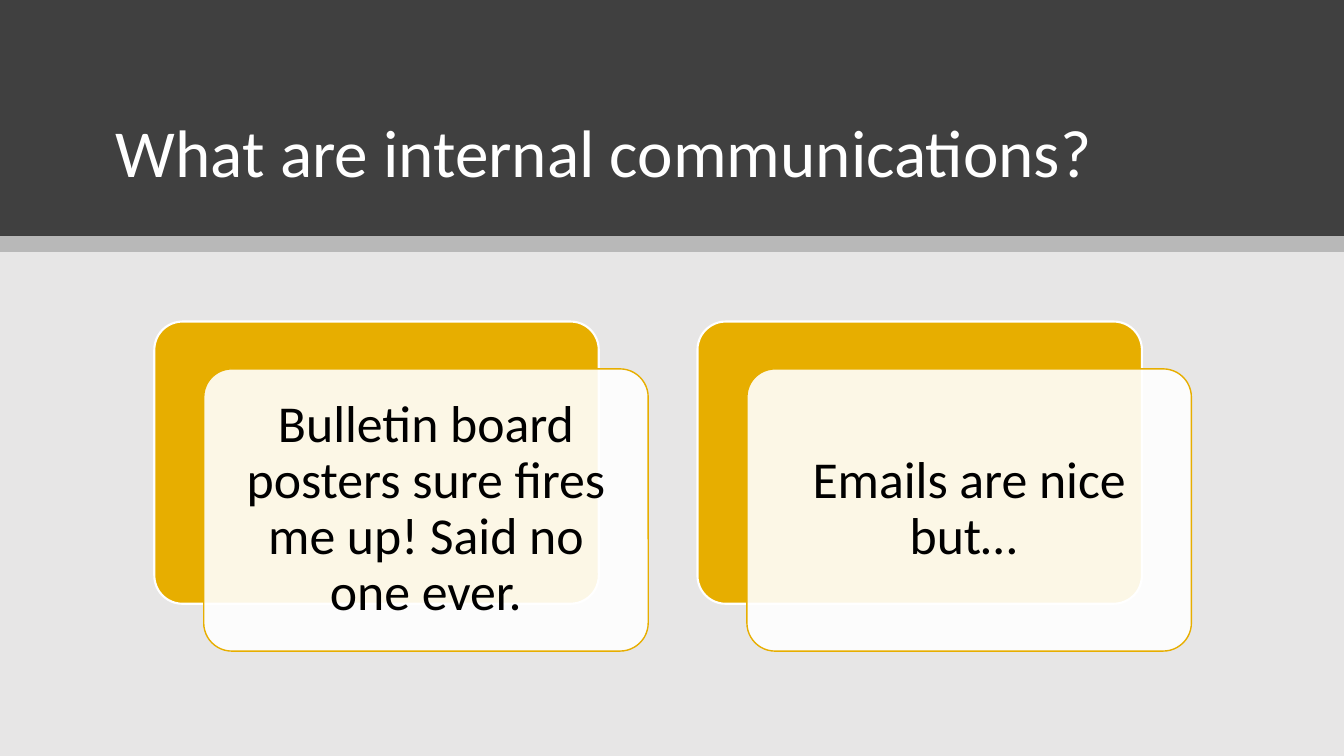
from dataclasses import dataclass
from typing import Any, Optional

from lxml import etree
from pptx import Presentation
from pptx.dml.color import RGBColor
from pptx.enum import shapes, text
from pptx.oxml.ns import qn
from pptx.util import Pt


@dataclass(frozen=True)
class Theme:
    page: str = "E7E6E6"
    header: str = "404040"
    gold: str = "E7AE00"
    white: str = "FFFFFF"
    black: str = "000000"
    font: str = "Calibri"
    title_size: float = 48
    card_size: float = 37
    line_spacing: float = 0.9


@dataclass(frozen=True)
class Panel:
    left: float
    top: float
    width: float
    height: float
    fill: str
    opacity: int = 100
    outline: Optional[str] = None
    outline_width: float = 0
    rounded: bool = False


THEME = Theme()
SLIDE_WIDTH, SLIDE_HEIGHT = 960, 540
HEADER_HEIGHT, STRIP_HEIGHT = 168.5, 11.5
CARD_LEFT, CARD_TOP, CARD_WIDTH, CARD_HEIGHT = 110.2, 229.7, 317.5, 201.6
CARD_STEP, FRONT_SHIFT_X, FRONT_SHIFT_Y = 388, 35.3, 33.8
CARD_INSET = 10.8

BANDS = [
    Panel(0, 0, SLIDE_WIDTH, SLIDE_HEIGHT, THEME.page),
    Panel(0, 0, SLIDE_WIDTH, HEADER_HEIGHT, THEME.header),
    Panel(0, HEADER_HEIGHT, SLIDE_WIDTH, STRIP_HEIGHT, THEME.black, opacity=20),
]
MESSAGES = [
    "Bulletin board posters sure fires me up! Said no one ever.",
    "Emails are nice but… ",
]


def apply_format(target: Any, values: dict[str, Any]) -> None:
    for attribute, value in values.items():
        setattr(target, attribute, value)


def draw_panel(slide: Any, panel: Panel) -> Any:
    kind = shapes.MSO_SHAPE.ROUNDED_RECTANGLE if panel.rounded else shapes.MSO_SHAPE.RECTANGLE
    drawn = slide.shapes.add_shape(
        kind, Pt(panel.left), Pt(panel.top), Pt(panel.width), Pt(panel.height)
    )
    drawn.shadow.inherit = False
    if panel.rounded:
        drawn.adjustments[0] = 0.1
    drawn.fill.solid()
    drawn.fill.fore_color.rgb = RGBColor.from_string(panel.fill)
    if panel.opacity < 100:
        colour = drawn.element.spPr.find(qn("a:solidFill"))[0]
        etree.SubElement(colour, qn("a:alpha"), val=str(panel.opacity * 1000))
    if panel.outline:
        drawn.line.color.rgb = RGBColor.from_string(panel.outline)
        drawn.line.width = Pt(panel.outline_width)
    else:
        drawn.line.fill.background()
    return drawn


def write_text(
    frame: Any, wording: str, size: float, colour: str, alignment: Any, frame_format: dict[str, Any]
) -> None:
    frame.text = wording
    apply_format(frame, {"word_wrap": True, "auto_size": text.MSO_AUTO_SIZE.NONE, **frame_format})
    paragraph = frame.paragraphs[0]
    apply_format(paragraph, {"alignment": alignment, "line_spacing": THEME.line_spacing})
    font = paragraph.runs[0].font
    apply_format(font, {"name": THEME.font, "size": Pt(size)})
    font.color.rgb = RGBColor.from_string(colour)


def draw_heading(slide: Any) -> None:
    heading = slide.shapes.title
    slide.shapes.element.append(heading.element)
    apply_format(
        heading, {"left": Pt(75.6), "top": Pt(33.8), "width": Pt(809.3), "height": Pt(107.3)}
    )
    write_text(
        heading.text_frame, "What are internal communications?", THEME.title_size, THEME.white,
        text.PP_ALIGN.LEFT, {"vertical_anchor": text.MSO_ANCHOR.BOTTOM},
    )


def draw_card(slide: Any, left: float, message: str) -> None:
    draw_panel(slide, Panel(
        left, CARD_TOP, CARD_WIDTH, CARD_HEIGHT, THEME.gold,
        outline=THEME.white, outline_width=1.5, rounded=True,
    ))
    front = draw_panel(slide, Panel(
        left + FRONT_SHIFT_X, CARD_TOP + FRONT_SHIFT_Y, CARD_WIDTH, CARD_HEIGHT, THEME.white,
        opacity=90, outline=THEME.gold, outline_width=1, rounded=True,
    ))
    sides = ("left", "top", "right", "bottom")
    insets = {f"margin_{side}": Pt(CARD_INSET) for side in sides}
    write_text(
        front.text_frame, message, THEME.card_size, THEME.black,
        text.PP_ALIGN.CENTER, {"vertical_anchor": text.MSO_ANCHOR.MIDDLE, **insets},
    )


def main() -> None:
    deck = Presentation()
    apply_format(deck, {"slide_width": Pt(SLIDE_WIDTH), "slide_height": Pt(SLIDE_HEIGHT)})
    slide = deck.slides.add_slide(deck.slide_layouts[5])
    for band in BANDS:
        draw_panel(slide, band)
    draw_heading(slide)
    for position, message in enumerate(MESSAGES):
        draw_card(slide, CARD_LEFT + position * CARD_STEP, message)
    deck.save("out.pptx")


if __name__ == "__main__":
    main()
